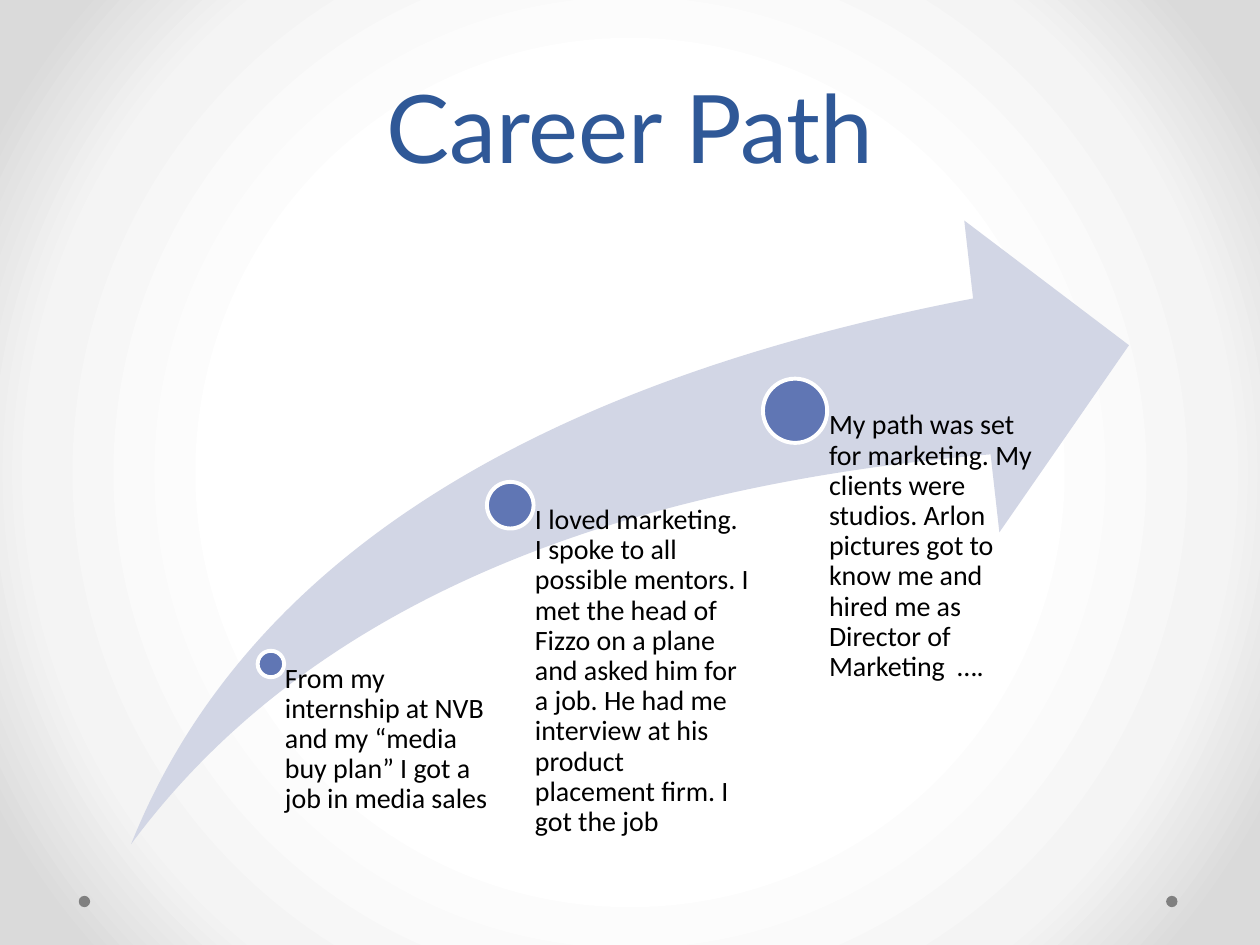
import pptx
import pptx.util
import pptx.dml.color
import pptx.enum.shapes
import pptx.enum.text
import pptx.oxml
import pptx.oxml.ns

TITLE = "Career Path"
STEPS = [
    ("From my internship at NVB and my “media buy plan” I got a job in media sales",
     (2.15, 5.27), 0.21, 1.85),
    ("I loved marketing. I spoke to all possible mentors. I met the head of Fizzo on a plane "
     "and asked him for a job. He had me interview at his product placement firm. I got the job",
     (4.05, 4.01), 0.37, 1.9),
    ("My path was set for marketing. My clients were studios. Arlon pictures got to know me "
     "and hired me as Director of Marketing  ….",
     (6.31, 3.26), 0.51, 1.9),
]
COLORS = {
    "title": "2F5897", "arrow": "D2D6E5", "step": "6076B4",
    "ring": "FFFFFF", "text": "000000", "corner": "808080",
}
GLOW = [(50, "FFFFFF"), (76, "F4F4F4"), (92, "DADADA")]
WIDTH, HEIGHT = 10, 7.5
ARROW = (1.04, 1.75, 7.92, 4.95)
ARROW_BOTTOM = ARROW[1] + ARROW[3]
CORNER_DOT = 0.09
CORNER_CENTERS = [WIDTH * 0.93, WIDTH * 0.067]
INSET_PER_DIAMETER = 0.53

Inches, Pt = pptx.util.Inches, pptx.util.Pt
KINDS = pptx.enum.shapes.MSO_SHAPE


def color(name):
    return pptx.dml.color.RGBColor.from_string(COLORS[name])


def add_solid(parent, kind, box, fill, ring=None):
    solid = parent.add_shape(kind, *map(Inches, box))
    solid.shadow.inherit = False
    solid.fill.solid()
    solid.fill.fore_color.rgb = color(fill)
    if ring:
        solid.line.color.rgb = color(ring)
        solid.line.width = Pt(2.25)
    else:
        solid.line.fill.background()
    return solid


def add_dot(parent, center, diameter, fill, ring=None):
    x, y = (c - diameter / 2 for c in center)
    return add_solid(parent, KINDS.OVAL, (x, y, diameter, diameter), fill, ring)


def add_words(parent, words, box, font, size, fill, spacing):
    frame = parent.add_textbox(*map(Inches, box)).text_frame
    frame.word_wrap = True
    frame.text = words
    paragraph = frame.paragraphs[0]
    paragraph.line_spacing = spacing
    run = paragraph.runs[0]
    run.font.name = font
    run.font.size = Pt(size)
    run.font.color.rgb = color(fill)
    return frame


def paint_glow(slide):
    slide.background.fill.gradient()
    gradient = slide.background._cSld.find(".//" + pptx.oxml.ns.qn("a:gradFill"))
    stops = "".join(
        f'<a:gs pos="{share * 1000}"><a:srgbClr val="{tint}"/></a:gs>' for share, tint in GLOW)
    glow = pptx.oxml.parse_xml(
        f'<a:gradFill {pptx.oxml.ns.nsdecls("a")} rotWithShape="1"><a:gsLst>{stops}</a:gsLst>'
        '<a:path path="circle"><a:fillToRect l="50000" t="50000" r="50000" b="50000"/></a:path>'
        '</a:gradFill>')
    gradient.getparent().replace(gradient, glow)


def main():
    deck = pptx.Presentation()
    deck.slide_width, deck.slide_height = Inches(WIDTH), Inches(HEIGHT)
    slide = deck.slides.add_slide(deck.slide_layouts[6])
    paint_glow(slide)

    for center in CORNER_CENTERS:
        add_dot(slide.shapes, (center, HEIGHT * 0.954), CORNER_DOT, "corner")

    title = add_words(slide.shapes, TITLE, (0.5, 0.17, 9, 1.33), "Lato", 54, "title", Pt(58))
    title.vertical_anchor = pptx.enum.text.MSO_ANCHOR.BOTTOM
    title.paragraphs[0].alignment = pptx.enum.text.PP_ALIGN.CENTER

    career = slide.shapes.add_group_shape().shapes
    arrow = add_solid(career, KINDS.SWOOSH_ARROW, ARROW, "arrow")
    arrow.adjustments[0] = arrow.adjustments[1] = 0.25

    for story, (x, y), diameter, width in STEPS:
        add_dot(career, (x, y), diameter, "step", "ring")
        frame = add_words(career, story, (x, y, width, ARROW_BOTTOM - y),
                          "Calibri", 16, "text", 0.9)
        frame.margin_left = Inches(diameter * INSET_PER_DIAMETER)
        frame.margin_top = frame.margin_right = frame.margin_bottom = 0

    deck.save("out.pptx")


if __name__ == "__main__":
    main()
